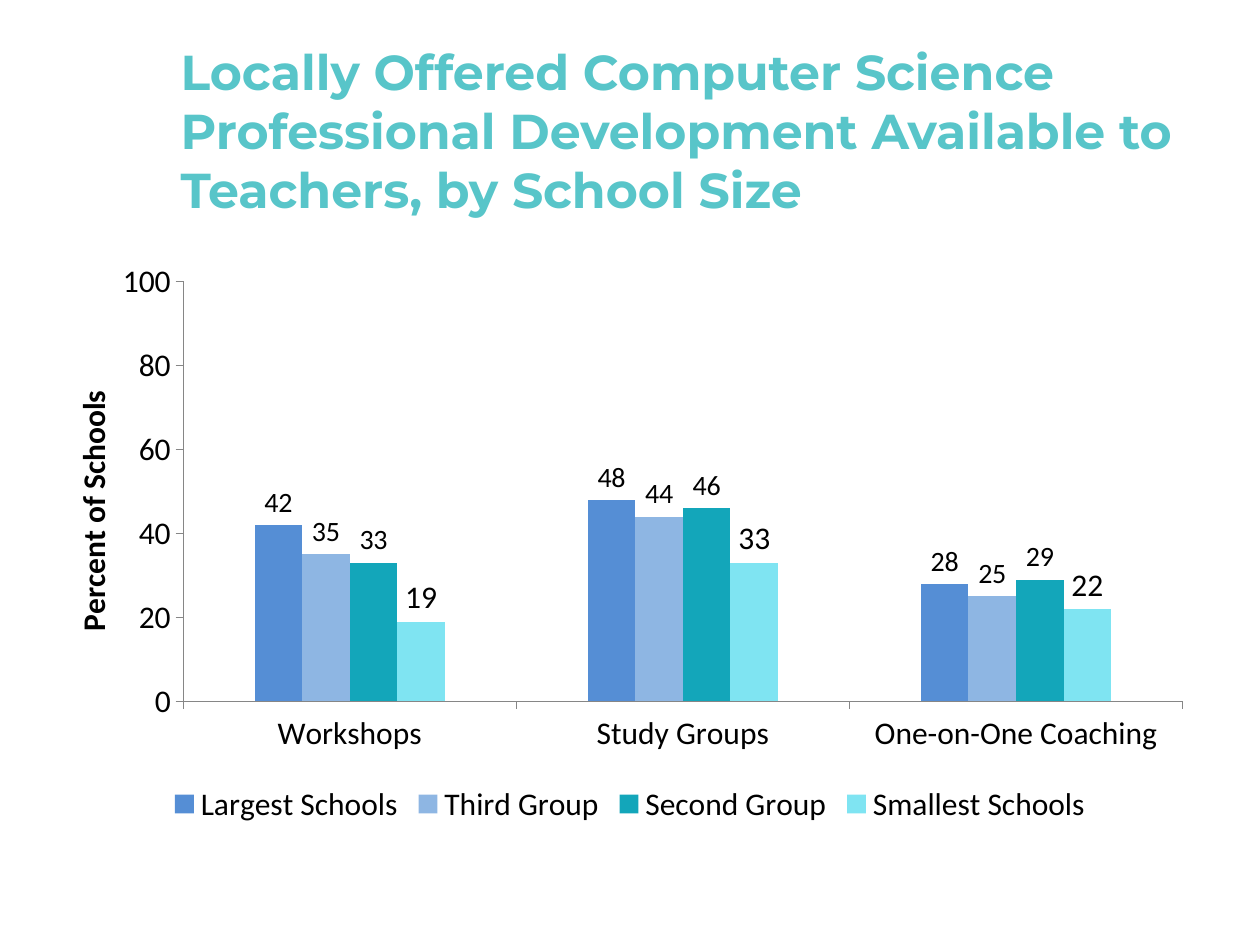
"""Build a slide with a clustered column chart of professional development by school size."""
from typing import NamedTuple

from lxml.etree import SubElement
from pptx import Presentation
from pptx.chart.data import CategoryChartData
from pptx.dml.color import RGBColor
from pptx.enum.chart import XL_CHART_TYPE as ChartType
from pptx.enum.chart import XL_LABEL_POSITION as LabelPosition
from pptx.enum.chart import XL_LEGEND_POSITION as LegendPosition
from pptx.enum.chart import XL_TICK_MARK as TickMark
from pptx.enum.text import MSO_ANCHOR as Anchor
from pptx.enum.text import MSO_AUTO_SIZE as AutoSize
from pptx.enum.text import PP_ALIGN as Align
from pptx.oxml.ns import qn
from pptx.util import Pt


class SchoolGroup(NamedTuple):
    name: str
    percents: tuple
    color: str
    label_size: int


CATEGORIES = ("Workshops", "Study Groups", "One-on-One Coaching")
GROUPS = (
    SchoolGroup("Largest Schools", (42, 48, 28), "558ED5", 16),
    SchoolGroup("Third Group", (35, 44, 25), "8EB6E3", 16),
    SchoolGroup("Second Group", (33, 46, 29), "13A6BA", 16),
    SchoolGroup("Smallest Schools", (19, 33, 22), "7FE4F2", 18),
)


def color(value: str) -> RGBColor:
    return RGBColor.from_string(value)


def style_font(font, name: str, size: float, hex_color: str, bold: bool = False) -> None:
    font.name, font.size, font.bold = name, Pt(size), bold
    font.color.rgb = color(hex_color)


def place(parent, index: int, **settings) -> None:
    for old_layout in parent.findall(qn("c:layout")):
        parent.remove(old_layout)
    layout = SubElement(parent, qn("c:layout"))
    parent.insert(index, layout)
    manual = SubElement(layout, qn("c:manualLayout"))
    for tag, value in settings.items():
        SubElement(manual, qn(f"c:{tag}")).set("val", str(value))


def add_title(slide, text: str) -> None:
    title = slide.shapes.title
    title.left, title.top, title.width, title.height = Pt(96), Pt(12), Pt(588), Pt(90)
    frame = title.text_frame
    frame.text = text
    frame.auto_size, frame.word_wrap = AutoSize.NONE, True
    frame.vertical_anchor = Anchor.MIDDLE
    frame.margin_top = Pt(38)
    paragraph = frame.paragraphs[0]
    paragraph.alignment = Align.LEFT
    style_font(paragraph.runs[0].font, "Montserrat", 28, "58C5C9", True)


def style_axis(axis) -> None:
    axis.has_major_gridlines = False
    axis.major_tick_mark, axis.minor_tick_mark = TickMark.OUTSIDE, TickMark.NONE
    axis.format.line.color.rgb = color("868686")
    axis.format.line.width = Pt(0.75)


def style_value_axis(axis) -> None:
    axis.minimum_scale, axis.maximum_scale, axis.major_unit = 0, 100, 20
    frame = axis.axis_title.text_frame
    frame.text = "Percent of Schools"
    style_font(frame.paragraphs[0].runs[0].font, "Calibri", 18, "000000", True)
    place(axis.axis_title._element, 1, xMode="edge", yMode="edge", x=0.02, y=0.27)


def style_series(series, group: SchoolGroup) -> None:
    series.format.fill.solid()
    series.format.fill.fore_color.rgb = color(group.color)
    labels = series.data_labels
    labels.show_value = True
    labels.position = LabelPosition.OUTSIDE_END
    style_font(labels.font, "Calibri", group.label_size, "000000")


def add_school_chart(slide) -> None:
    data = CategoryChartData()
    data.categories = CATEGORIES
    for group in GROUPS:
        data.add_series(group.name, group.percents)
    chart = slide.shapes.add_chart(
        ChartType.COLUMN_CLUSTERED, Pt(24), Pt(126), Pt(672), Pt(348), data
    ).chart
    style_font(chart.font, "Calibri", 18, "000000")
    chart.has_title = False
    chart.has_legend = True
    chart.legend.position = LegendPosition.BOTTOM
    chart.legend.include_in_layout = False
    for axis in (chart.category_axis, chart.value_axis):
        style_axis(axis)
    style_value_axis(chart.value_axis)
    plot = chart.plots[0]
    plot.gap_width, plot.overlap, plot.vary_by_categories = 300, 0, False
    for series, group in zip(plot.series, GROUPS):
        style_series(series, group)
    place(chart._chartSpace.chart.plotArea, 0, layoutTarget="inner",
          xMode="edge", yMode="edge", x=0.12, y=0.1, w=0.85, h=0.69)


def main() -> None:
    presentation = Presentation()
    presentation.slide_width, presentation.slide_height = Pt(720), Pt(540)
    slide = presentation.slides.add_slide(presentation.slide_layouts[5])
    add_title(slide, "Locally Offered Computer Science Professional Development "
                     "Available to Teachers, by School Size")
    add_school_chart(slide)
    presentation.save("out.pptx")


if __name__ == "__main__":
    main()
